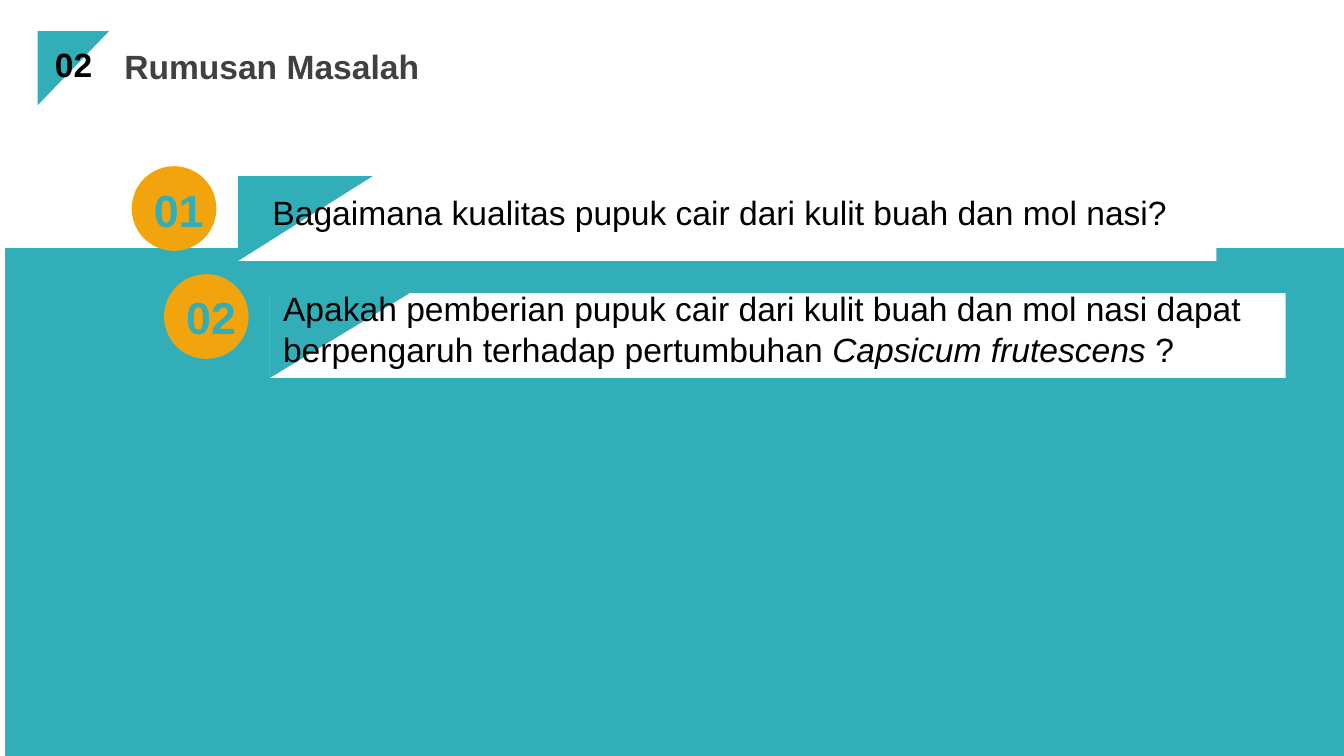
"""Build the problem statement slide with a heading card and two numbered questions."""
from lxml.etree import SubElement
from pptx import Presentation
from pptx.dml.color import RGBColor
from pptx.enum.shapes import MSO_SHAPE
from pptx.enum.text import PP_ALIGN
from pptx.oxml.ns import qn
from pptx.util import Cm, Pt

COLORS = {"teal": "32AEB8", "orange": "F2A40D", "white": "FFFFFF", "black": "000000", "gray": "404040"}


def add_filled_shape(shapes, kind, box, color, rotation=0):
    shape = shapes.add_shape(kind, *[Cm(value) for value in box])
    shape.fill.solid()
    shape.fill.fore_color.rgb = RGBColor.from_string(COLORS[color])
    shape.line.fill.background()
    shape.rotation = rotation
    shape.element.remove(shape.element.find(qn("p:style")))


def add_text(shapes, box, runs, size, color, bold=False, alignment=PP_ALIGN.LEFT):
    text_frame = shapes.add_textbox(*[Cm(value) for value in box]).text_frame
    text_frame.word_wrap = True
    paragraph = text_frame.paragraphs[0]
    paragraph.alignment = alignment
    paragraph.font.name = "Arial"
    paragraph.font.size = Pt(size)
    paragraph.font.bold = bold
    paragraph.font.color.rgb = RGBColor.from_string(COLORS[color])
    for text, italic in runs:
        run = paragraph.add_run()
        run.text = text
        if italic:
            run.font.italic = True


presentation = Presentation()
presentation.slide_width = Cm(25.4)
presentation.slide_height = Cm(14.28)
slide = presentation.slides.add_slide(presentation.slide_layouts[6])
shapes = slide.shapes

add_filled_shape(shapes, MSO_SHAPE.RECTANGLE, (0.1, 4.69, 25.3, 9.59), "teal")

cards = [
    (0.71, 0.59, 9.8, 1.4, 1.35),
    (4.5, 3.33, 18.49, 1.6, 2.54),
    (5.1, 5.54, 19.2, 1.6, 2.64),
]
for left, top, width, height, corner in cards:
    group = shapes.add_group_shape()
    add_filled_shape(group.shapes, MSO_SHAPE.RECTANGLE, (left, top, width, height), "white")
    offset = (corner - height) / 2
    triangle_box = (left + offset, top - offset, height, corner)
    add_filled_shape(group.shapes, MSO_SHAPE.RIGHT_TRIANGLE, triangle_box, "teal", 90)
    effects = SubElement(group.element.grpSpPr, qn("a:effectLst"))
    shadow = SubElement(effects, qn("a:outerShdw"), blurRad=str(Pt(5)), sx="101000", algn="l", rotWithShape="0")
    shadow_color = SubElement(shadow, qn("a:srgbClr"), val=COLORS["black"])
    SubElement(shadow_color, qn("a:alpha"), val="40000")

add_text(shapes, (0.79, 0.71, 1.3, 1.02), [("02", False)], 18, "black", bold=True)
add_text(shapes, (2.1, 0.74, 8.18, 1.02), [("Rumusan Masalah", False)], 18, "gray", bold=True)

badges = [("01", 2.49, 3.14, 3.33), ("02", 3.1, 5.18, 5.34)]
for number, left, top, text_top in badges:
    add_filled_shape(shapes, MSO_SHAPE.OVAL, (left, top, 1.6, 1.6), "orange")
    add_text(shapes, (left, text_top, 1.78, 1.27), [(number, False)], 24, "teal", True, PP_ALIGN.CENTER)

questions = [
    ((4.9, 3.5, 17.8, 1.02), [("Bagaimana kualitas pupuk cair dari kulit buah dan mol nasi?", False)]),
    ((5.1, 5.32, 18.8, 1.8), [
        ("Apakah pemberian pupuk cair dari kulit buah dan mol nasi dapat berpengaruh terhadap pertumbuhan ", False),
        ("Capsicum frutescens ", True),
        ("?", False),
    ]),
]
for box, runs in questions:
    add_text(shapes, box, runs, 18, "black")

presentation.save("out.pptx")
